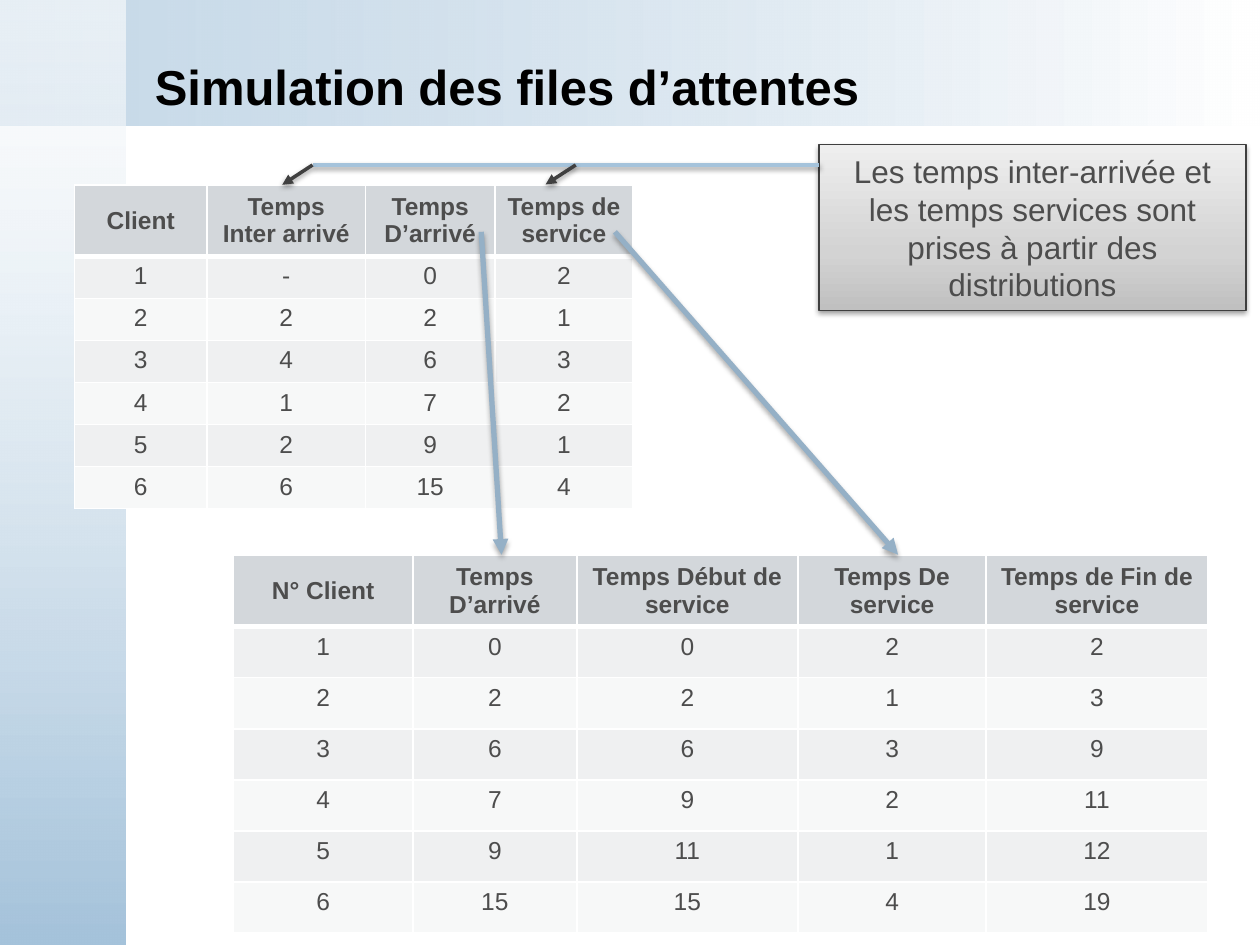
import pptx
import pptx.util
import pptx.oxml
import pptx.oxml.ns
import pptx.dml.color
import pptx.enum.text
import pptx.enum.shapes

Pt = pptx.util.Pt
Align = pptx.enum.text.PP_ALIGN
Anchor = pptx.enum.text.MSO_ANCHOR
RECT = pptx.enum.shapes.MSO_SHAPE.RECTANGLE
LINE = pptx.enum.shapes.MSO_CONNECTOR.STRAIGHT
NS = pptx.oxml.ns.nsdecls("a")

TITLE = "Simulation des files d’attentes"
NOTE = "Les temps inter-arrivée et les temps services sont prises à partir des distributions"
BARS = [
    ((0, 0, 720, 72), [(0, "A5C3DB", 62), (100, "FFFFFF", 100)], 0),
    ((0, 0, 72, 540), [(0, "FFFFFF", 59), (100, "A5C3DB", 100)], 90),
]
SHADES = [(0, "C0C0C0", 100), (35, "D3D3D3", 100), (100, "EEEEEE", 100)]
TABLES = [
    {
        "spot": (42.7, 105.6),
        "cols": [75.5, 90.8, 73.8, 79],
        "head": 29.5,
        "row": 21.6,
        "rows": [
            ["Client", "Temps\vInter arrivé", "Temps D’arrivé", "Temps de service"],
            [1, "-", 0, 2],
            [2, 2, 2, 1],
            [3, 4, 6, 3],
            [4, 1, 7, 2],
            [5, 2, 9, 1],
            [6, 6, 15, 4],
        ],
    },
    {
        "spot": (133.4, 317.2),
        "cols": [102.6, 93.6, 126.4, 107.6, 126.6],
        "head": 29.2,
        "row": 29.2,
        "rows": [
            ["N° Client", "Temps D’arrivé", "Temps Début de service",
             "Temps De service", "Temps de Fin de service"],
            [1, 0, 0, 2, 2],
            [2, 2, 2, 1, 3],
            [3, 6, 6, 3, 9],
            [4, 7, 9, 2, 11],
            [5, 9, 11, 1, 12],
            [6, 15, 15, 4, 19],
        ],
    },
]
LINES = [
    ((468, 94.3), (178.6, 94.3), "A5C3DB", 2, False),
    ((178.6, 94.3), (161.3, 105.6), "404040", 2, True),
    ((329, 94.3), (311.8, 105.4), "404040", 2, True),
    ((351.4, 132.5), (513.2, 317), "95B0C6", 3, True),
    ((275, 132.5), (286.6, 317), "95B0C6", 3, True),
]


def hue(code):
    return pptx.dml.color.RGBColor.from_string(code)


def node(xml):
    return pptx.oxml.parse_xml(xml)


def write(frame, text, size=14, color="4D4D4D", bold=False, align=Align.CENTER):
    frame.word_wrap = True
    para = frame.paragraphs[0]
    para.text = str(text)
    para.alignment = align
    for run in para.runs:
        run.font.name = "Arial"
        run.font.size = Pt(size)
        run.font.bold = bold
        run.font.color.rgb = hue(color)


def block(slide, area, stops, angle):
    shape = slide.shapes.add_shape(RECT, *map(Pt, area))
    shape.shadow.inherit = False
    shape.line.fill.background()
    marks = "".join(
        f'<a:gs pos="{pos * 1000}"><a:srgbClr val="{code}">'
        f'<a:alpha val="{alpha * 1000}"/></a:srgbClr></a:gs>'
        for pos, code, alpha in stops)
    shape.element.spPr.insert(2, node(
        f'<a:gradFill {NS} rotWithShape="1"><a:gsLst>{marks}</a:gsLst>'
        f'<a:lin ang="{angle * 60000}" scaled="0"/></a:gradFill>'))
    return shape


def shade(shape, alpha=38, dist=1.6):
    props = shape.element.spPr
    for old in props.findall(pptx.oxml.ns.qn("a:effectLst")):
        props.remove(old)
    props.append(node(
        f'<a:effectLst {NS}><a:outerShdw blurRad="{Pt(3.1)}" dist="{Pt(dist)}" '
        f'dir="5400000" rotWithShape="0"><a:srgbClr val="000000">'
        f'<a:alpha val="{alpha * 1000}"/></a:srgbClr></a:outerShdw></a:effectLst>'))


def edge(cell, head, first):
    props = cell._tc.get_or_add_tcPr()
    wide = {"L": 1, "R": 1, "T": 3 if first else 1, "B": 3 if head else 1}
    for spot, (side, width) in enumerate(wide.items()):
        props.insert(spot, node(
            f'<a:ln{side} {NS} w="{Pt(width)}"><a:solidFill>'
            f'<a:srgbClr val="FFFFFF"/></a:solidFill></a:ln{side}>'))


def grid(slide, spot, cols, head, row, rows):
    highs = [head] + [row] * (len(rows) - 1)
    area = (*spot, sum(cols), sum(highs))
    table = slide.shapes.add_table(len(rows), len(cols), *map(Pt, area)).table
    for col, width in zip(table.columns, cols):
        col.width = Pt(width)
    for r, (high, words) in enumerate(zip(highs, rows)):
        table.rows[r].height = Pt(high)
        for c, word in enumerate(words):
            cell = table.cell(r, c)
            cell.vertical_anchor = Anchor.TOP if r else Anchor.MIDDLE
            cell.fill.solid()
            code = ("EFF0F1" if r % 2 else "F7F8F8") if r else "D3D7DB"
            cell.fill.fore_color.rgb = hue(code)
            edge(cell, r == 0, r == 1)
            write(cell.text_frame, word, bold=r == 0)


def link(slide, start, end, color, width, arrow):
    line = slide.shapes.add_connector(LINE, *map(Pt, (*start, *end)))
    line.line.color.rgb = hue(color)
    line.line.width = Pt(width)
    if arrow:
        line.line._get_or_add_ln().append(node(f'<a:tailEnd {NS} type="triangle"/>'))
    if width == 3:
        shade(line, 35, 1.8)
    else:
        shade(line)


def main():
    deck = pptx.Presentation()
    deck.slide_width, deck.slide_height = Pt(720), Pt(540)
    slide = deck.slides.add_slide(deck.slide_layouts[6])
    for bar in BARS:
        block(slide, *bar)
    title = slide.shapes.add_textbox(*map(Pt, (81.4, 31.7, 608.4, 35.3))).text_frame
    title.vertical_anchor = Anchor.MIDDLE
    write(title, TITLE, size=28, color="000000", bold=True, align=Align.LEFT)
    for table in TABLES:
        grid(slide, **table)
    note = block(slide, (468, 82.8, 244, 94.5), SHADES, 270)
    note.line.color.rgb = hue("3F3F3F")
    note.line.width = Pt(0.75)
    shade(note)
    write(note.text_frame, NOTE, size=18)
    for line in LINES:
        link(slide, *line)
    deck.save("out.pptx")


if __name__ == "__main__":
    main()
